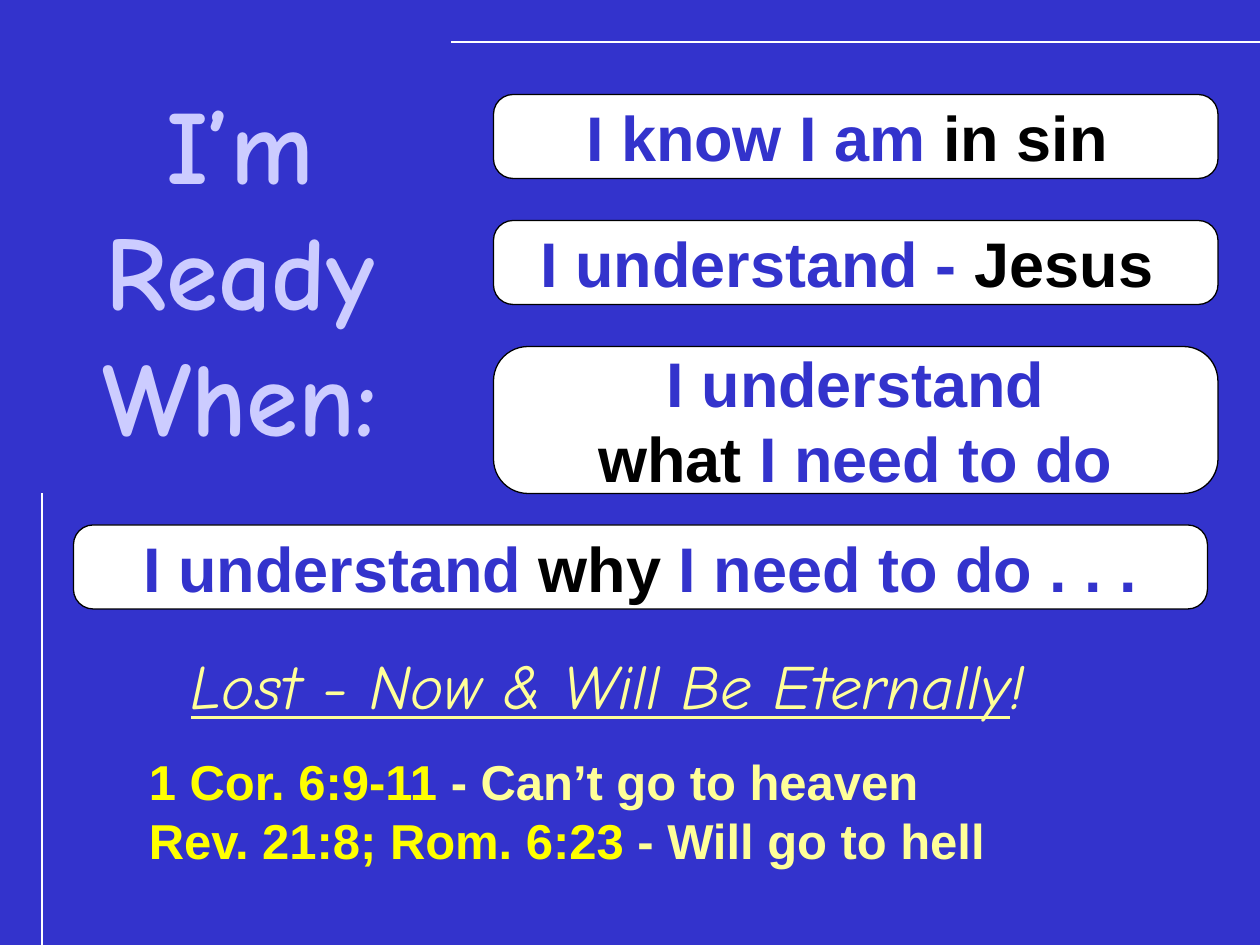
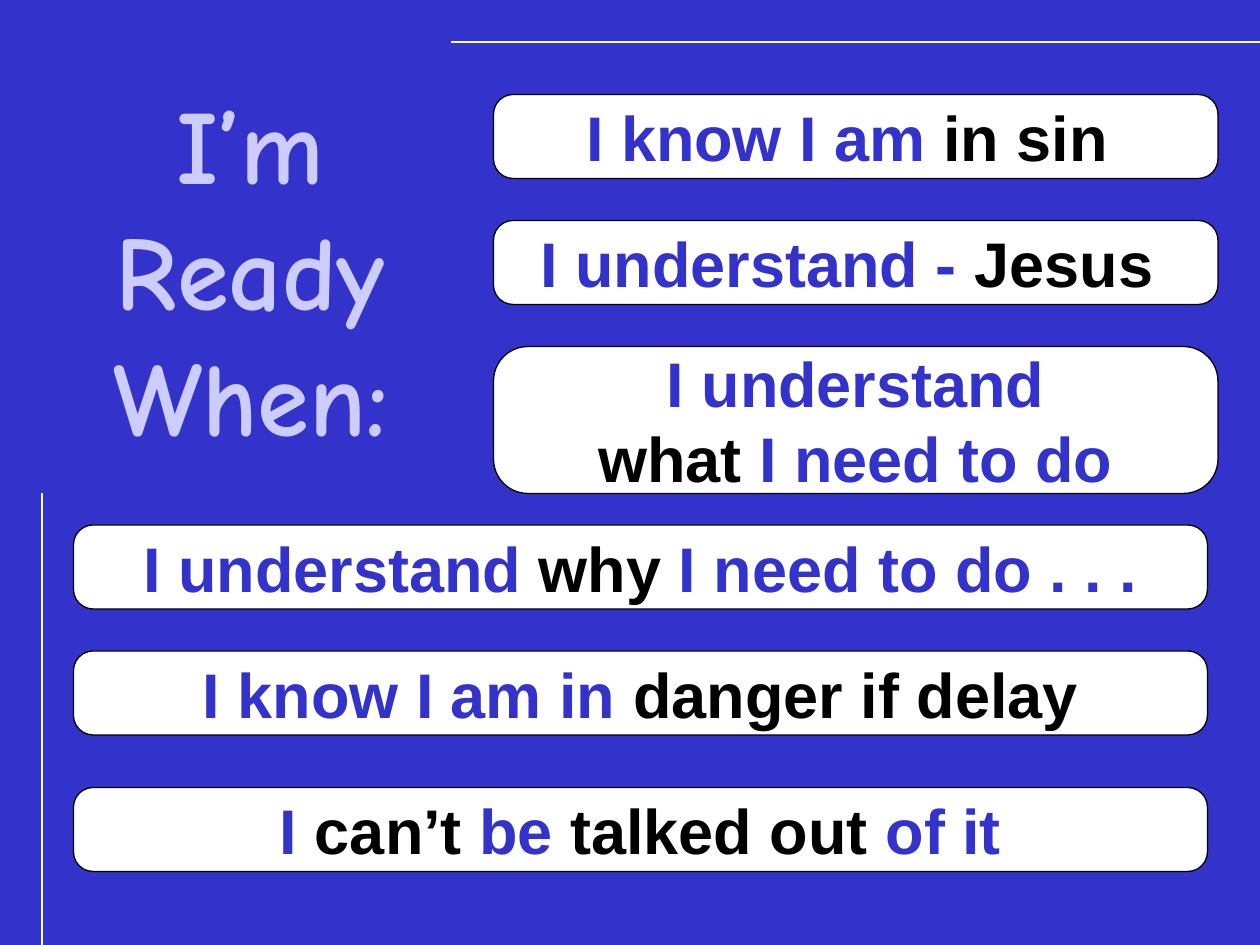
import dataclasses
import typing

import pptx
import pptx.dml.color
import pptx.enum.shapes
import pptx.enum.text
import pptx.oxml
import pptx.oxml.ns
import pptx.presentation
import pptx.shapes.base
import pptx.slide
import pptx.text.text
import pptx.util

COLOURS = {
    "background": "3333CC",
    "title": "CCCCFF",
    "panel": "FFFFFF",
    "outline": "000000",
    "plain": "3333CC",
    "strong": "000000",
    "note": "FFFF99",
    "verse": "FFFF00",
}

# The slide is a grid of 120 columns and 90 rows, twelve to the inch.
SLIDE_WIDTH = pptx.util.Inches(10)
SLIDE_HEIGHT = pptx.util.Inches(7.5)
COLUMNS, ROWS = 120, 90

TITLE_FORMAT = {"name": "Comic Neue", "size": pptx.util.Pt(60), "bold": True}
PANEL_FORMAT = {"name": "Arial", "size": pptx.util.Pt(36), "bold": True}
WARNING_FORMAT = {"name": "Comic Neue", "size": pptx.util.Pt(36), "italic": True}
VERSE_FORMAT = {"name": "Arial", "size": pptx.util.Pt(28), "bold": True}


class Run(typing.NamedTuple):
    text: str
    colour: str = "plain"
    underline: bool = False


Lines = list[list[Run]]


class Area(typing.NamedTuple):
    column: float
    row: float
    columns: float
    rows: float


class Rule(typing.NamedTuple):
    start: tuple[int, int]
    end: tuple[int, int]


@dataclasses.dataclass(frozen=True)
class Panel:
    row: int
    lines: Lines
    wide: bool = False
    rows: int = 8

    def area(self) -> Area:
        column, columns = (7, 108) if self.wide else (47, 69)
        return Area(column, self.row, columns, self.rows)


@dataclasses.dataclass(frozen=True)
class TextBlock:
    area: Area
    lines: Lines
    text_format: dict[str, typing.Any]
    centred: bool = False


RULES = [Rule((4, 47), (4, ROWS)), Rule((43, 4), (COLUMNS, 4))]

SHARED_PANELS = [
    Panel(9, [[Run("I know I am "), Run("in sin ", "strong")]]),
    Panel(21, [[Run("I understand - "), Run("Jesus ", "strong")]]),
    Panel(
        33,
        [[Run("I understand")], [Run("what", "strong"), Run(" I need to do")]],
        rows=14,
    ),
    Panel(
        50,
        [[Run("I understand "), Run("why", "strong"), Run(" I need to do . . .")]],
        wide=True,
    ),
]

CLOSING_PANELS = [
    Panel(62, [[Run("I know I am in "), Run("danger if delay", "strong")]], wide=True),
    Panel(
        75,
        [[
            Run("I "),
            Run("can’t", "strong"),
            Run(" be "),
            Run("talked out ", "strong"),
            Run("of it"),
        ]],
        wide=True,
    ),
]

LOST_NOTES = [
    TextBlock(
        Area(17, 61, 88.9, 8.4),
        [[Run("Lost - Now & Will Be Eternally", "note", True), Run("!", "note")]],
        WARNING_FORMAT,
    ),
    TextBlock(
        Area(13, 71, 83, 12.5),
        [
            [Run("1 Cor. 6:9-11", "verse"), Run(" - Can’t go to heaven", "note")],
            [Run("Rev. 21:8; Rom. 6:23", "verse"), Run(" - Will go to hell", "note")],
        ],
        VERSE_FORMAT,
    ),
]


def across(columns: float) -> pptx.util.Emu:
    return pptx.util.Emu(round(SLIDE_WIDTH * columns / COLUMNS))


def down(rows: float) -> pptx.util.Emu:
    return pptx.util.Emu(round(SLIDE_HEIGHT * rows / ROWS))


def place(area: Area) -> tuple[pptx.util.Emu, ...]:
    """Turn a grid area into left, top, width and height."""
    return across(area.column), down(area.row), across(area.columns), down(area.rows)


def colour(name: str) -> pptx.dml.color.RGBColor:
    return pptx.dml.color.RGBColor.from_string(COLOURS[name])


def write_lines(
    frame: pptx.text.text.TextFrame,
    lines: Lines,
    text_format: dict[str, typing.Any],
    centred: bool,
) -> None:
    frame.word_wrap = False
    alignment = pptx.enum.text.PP_ALIGN
    for index, line in enumerate(lines):
        paragraph = frame.add_paragraph() if index else frame.paragraphs[0]
        paragraph.alignment = alignment.CENTER if centred else alignment.LEFT
        for part in line:
            run = paragraph.add_run()
            run.text = part.text
            for attribute, value in text_format.items():
                setattr(run.font, attribute, value)
            run.font.underline = part.underline
            run.font.color.rgb = colour(part.colour)


def draw_rule(slide: pptx.slide.Slide, rule: Rule) -> None:
    connector = slide.shapes.add_connector(
        pptx.enum.shapes.MSO_CONNECTOR.STRAIGHT,
        across(rule.start[0]),
        down(rule.start[1]),
        across(rule.end[0]),
        down(rule.end[1]),
    )
    connector.line.color.rgb = colour("panel")
    connector.line.width = pptx.util.Pt(0.75)
    properties = connector._element.spPr
    properties.append(pptx.oxml.parse_xml(f"<a:effectLst {pptx.oxml.ns.nsdecls('a')}/>"))


def draw_panel(slide: pptx.slide.Slide, panel: Panel) -> None:
    shape = slide.shapes.add_shape(
        pptx.enum.shapes.MSO_SHAPE.ROUNDED_RECTANGLE, *place(panel.area())
    )
    shape.adjustments[0] = 0.235
    shape.shadow.inherit = False
    shape.fill.solid()
    shape.fill.fore_color.rgb = colour("panel")
    shape.line.color.rgb = colour("outline")
    shape.line.width = pptx.util.Pt(0.75)
    shape.text_frame.vertical_anchor = pptx.enum.text.MSO_ANCHOR.MIDDLE
    write_lines(shape.text_frame, panel.lines, PANEL_FORMAT, centred=True)


def draw_text(slide: pptx.slide.Slide, block: TextBlock) -> None:
    frame = slide.shapes.add_textbox(*place(block.area)).text_frame
    frame.auto_size = pptx.enum.text.MSO_AUTO_SIZE.SHAPE_TO_FIT_TEXT
    write_lines(frame, block.lines, block.text_format, block.centred)


def add_ready_slide(
    presentation: pptx.presentation.Presentation,
    title_column: int,
    extra_panels: typing.Sequence[Panel] = (),
    notes: typing.Sequence[TextBlock] = (),
) -> None:
    slide = presentation.slides.add_slide(presentation.slide_layouts[6])
    slide.background.fill.solid()
    slide.background.fill.fore_color.rgb = colour("background")
    title_lines = [[Run(word, "title")] for word in ("I’m", "Ready", "When:")]
    title_area = Area(title_column, 7, 33.7, 37.2)
    draw_text(slide, TextBlock(title_area, title_lines, TITLE_FORMAT, centred=True))
    for rule in RULES:
        draw_rule(slide, rule)
    for panel in [*SHARED_PANELS, *extra_panels]:
        draw_panel(slide, panel)
    for note in notes:
        draw_text(slide, note)


def main() -> None:
    presentation = pptx.Presentation()
    presentation.slide_width = SLIDE_WIDTH
    presentation.slide_height = SLIDE_HEIGHT
    add_ready_slide(presentation, title_column=6, notes=LOST_NOTES)
    add_ready_slide(presentation, title_column=7, extra_panels=CLOSING_PANELS)
    presentation.save("out.pptx")


if __name__ == "__main__":
    main()
